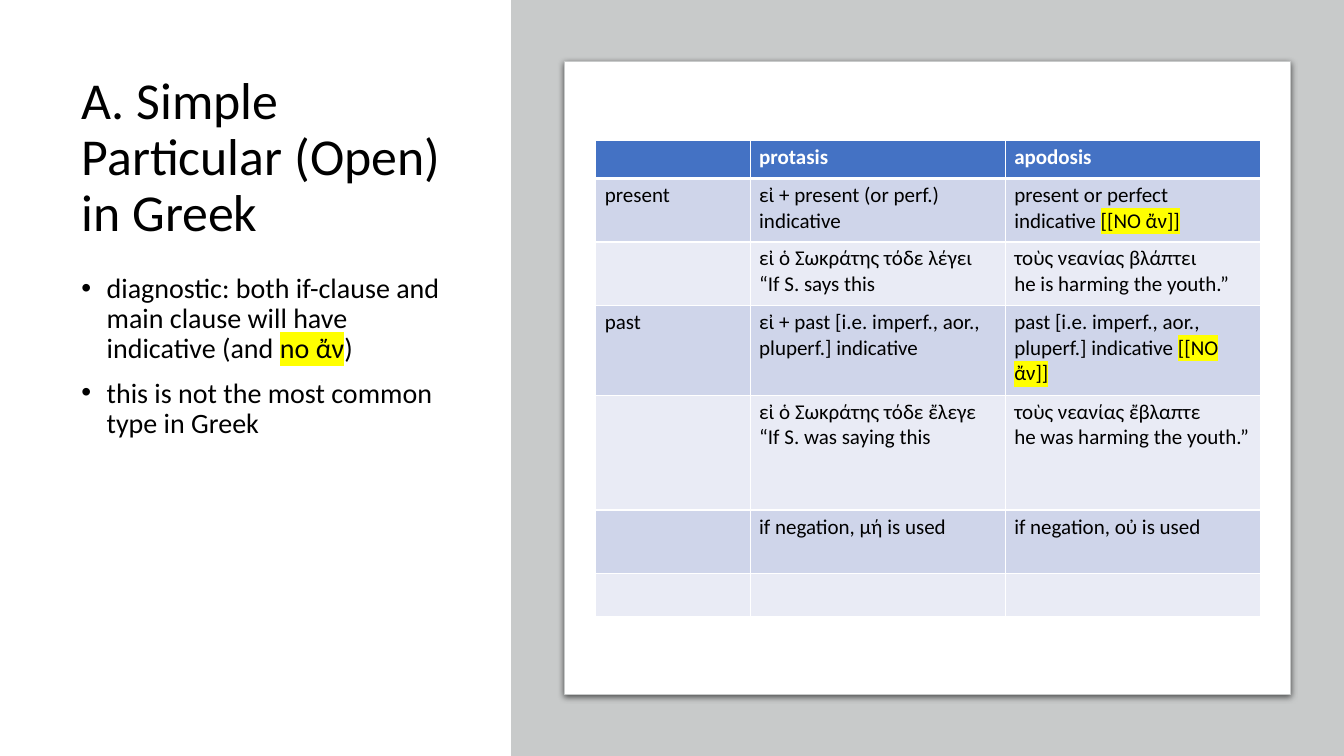
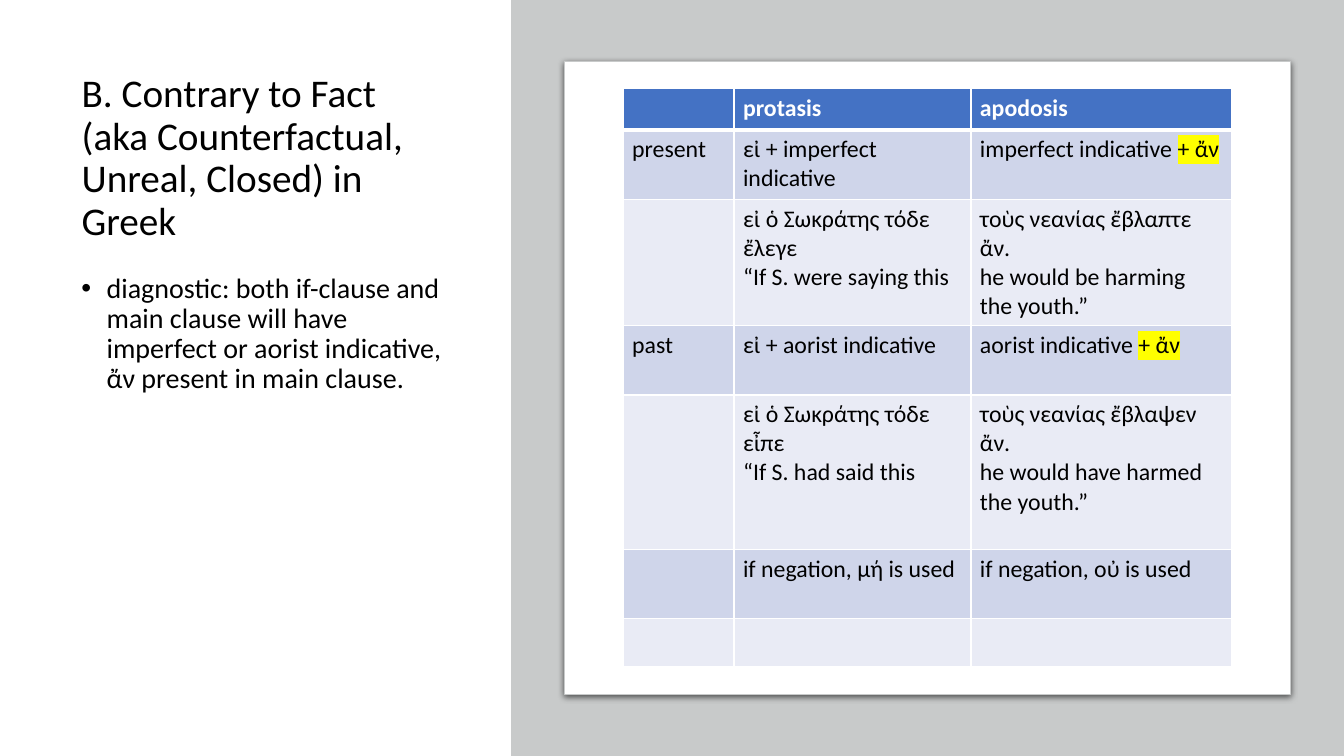
from lxml import etree
from pptx import Presentation
from pptx.dml.color import RGBColor
from pptx.enum.shapes import MSO_SHAPE
from pptx.enum.text import MSO_ANCHOR, MSO_AUTO_SIZE, PP_ALIGN
from pptx.oxml.ns import qn
from pptx.util import Inches, Pt

RECTANGLE = MSO_SHAPE.RECTANGLE
MIDDLE = MSO_ANCHOR.MIDDLE
NO_AUTOFIT = MSO_AUTO_SIZE.NONE
LEFT = PP_ALIGN.LEFT

FONT = "Calibri"
BLACK = RGBColor(0x00, 0x00, 0x00)
WHITE = RGBColor(0xFF, 0xFF, 0xFF)
GREY = RGBColor(0xC8, 0xCA, 0xCA)
HEADER_BLUE = RGBColor(0x44, 0x72, 0xC4)
BANDS = (RGBColor(0xCF, 0xD5, 0xEA), RGBColor(0xE9, 0xEB, 0xF5))
YELLOW = RGBColor(0xFF, 0xFF, 0x00)

TITLE_BOX = (0.71, 0.69, 3.83, 1.77)
BODY_BOX = (0.71, 2.67, 3.83, 4.14)
SIDE_PANEL = (5.07, 0, 8.26, 7.5)
CARD = (5.6, 0.61, 7.2, 6.28)
BODY_SIZE = 20
BULLET_INDENT = Inches(0.25)

# Text between bars is highlighted; a line break starts a new paragraph.
HEADER = ("", "protasis", "apodosis")
NEGATION = ("", "if negation, μή is used", "if negation, οὐ is used")
EMPTY = ("", "", "")

SLIDES = [
    {
        "title": "A. Simple Particular (Open) in Greek",
        "title_size": 37,
        "bullets": [
            "diagnostic: both if-clause and main clause will have indicative (and |no ἄν|)",
            "this is not the most common type in Greek",
        ],
        "table_origin": (5.91, 1.39),
        "columns": (1.53, 2.53, 2.53),
        "row_heights": (0.38, 0.63, 0.63, 0.89, 1.14, 0.63, 0.43),
        "text_size": 15,
        "cell_margin": 0.04,
        "rows": [
            HEADER,
            ("present", "εἰ + present (or perf.) indicative",
             "present or perfect indicative |[[NO ἄν]]|"),
            ("", "εἰ ὁ Σωκράτης τόδε λέγει\n“If S. says this",
             "τοὺς νεανίας βλάπτει\nhe is harming the youth.”"),
            ("past", "εἰ + past [i.e. imperf., aor., pluperf.] indicative",
             "past [i.e. imperf., aor., pluperf.] indicative |[[NO ἄν]]|"),
            ("", "εἰ ὁ Σωκράτης τόδε ἔλεγε\n“If S. was saying this",
             "τοὺς νεανίας ἔβλαπτε\nhe was harming the youth.”"),
            NEGATION,
            EMPTY,
        ],
    },
    {
        "title": "B. Contrary to Fact (aka Counterfactual, Unreal, Closed) in Greek",
        "title_size": 28,
        "bullets": [
            "diagnostic: both if-clause and main clause will have imperfect or "
            "aorist indicative, ἄν present in main clause.",
        ],
        "table_origin": (6.18, 0.88),
        "columns": (1.1, 2.35, 2.59),
        "row_heights": (0.41, 0.69, 1.25, 0.69, 1.53, 0.69, 0.47),
        "text_size": 17,
        "cell_margin": 0.05,
        "rows": [
            HEADER,
            ("present", "εἰ + imperfect indicative", "imperfect indicative |+ ἄν|"),
            ("", "εἰ ὁ Σωκράτης τόδε ἔλεγε\n“If S. were saying this",
             "τοὺς νεανίας ἔβλαπτε ἄν.\nhe would be harming the youth.”"),
            ("past", "εἰ + aorist indicative", "aorist indicative |+ ἄν|"),
            ("", "εἰ ὁ Σωκράτης τόδε εἶπε\n“If S. had said this",
             "τοὺς νεανίας ἔβλαψεν ἄν.\nhe would have harmed the youth.”"),
            NEGATION,
            EMPTY,
        ],
    },
]


def inches(values):
    return [Inches(value) for value in values]


def add_child(parent, tag, **attributes):
    child = etree.SubElement(parent, qn(tag))
    for name, value in attributes.items():
        child.set(name, str(value))
    return child


def highlight(run):
    marker = etree.Element(qn("a:highlight"))
    add_child(marker, "a:srgbClr", val=YELLOW)
    run.font.fill._xPr.find(qn("a:solidFill")).addnext(marker)


def write_text(text_frame, lines, size, color=BLACK, bold=False):
    """Write one paragraph per line, highlighting the parts between bars."""
    for index, line in enumerate(lines):
        paragraph = text_frame.paragraphs[0] if index == 0 else text_frame.add_paragraph()
        for part_index, part in enumerate(line.split("|")):
            if not part:
                continue
            run = paragraph.add_run()
            run.text = part
            run.font.name = FONT
            run.font.size = Pt(size)
            run.font.bold = bold
            run.font.color.rgb = color
            if part_index % 2:
                highlight(run)


def add_title(slide, text, size):
    title = slide.shapes.title
    title.left, title.top, title.width, title.height = inches(TITLE_BOX)
    text_frame = title.text_frame
    text_frame.word_wrap = True
    text_frame.auto_size = NO_AUTOFIT
    text_frame.vertical_anchor = MIDDLE
    write_text(text_frame, [text], size)
    text_frame.paragraphs[0].alignment = LEFT
    text_frame.paragraphs[0].line_spacing = 0.9


def add_bullets(slide, bullets):
    text_frame = slide.shapes.add_textbox(*inches(BODY_BOX)).text_frame
    text_frame.word_wrap = True
    write_text(text_frame, bullets, BODY_SIZE)
    for paragraph in text_frame.paragraphs:
        paragraph.line_spacing = 0.9
        paragraph.space_before = Pt(10)
        properties = paragraph._p.get_or_add_pPr()
        properties.set("marL", str(BULLET_INDENT))
        properties.set("indent", str(-BULLET_INDENT))
        add_child(properties, "a:buFont", typeface="Arial")
        add_child(properties, "a:buChar", char="•")


def add_panel(slide, box, color):
    panel = slide.shapes.add_shape(RECTANGLE, *inches(box))
    panel.shadow.inherit = False
    panel.fill.solid()
    panel.fill.fore_color.rgb = color
    panel.line.fill.background()
    return panel


def add_card(slide):
    card = add_panel(slide, CARD, WHITE)
    card.line.color.rgb = GREY
    card.line.width = Pt(0.75)
    effects = card._element.spPr.find(qn("a:effectLst"))
    shadow = add_child(effects, "a:outerShdw", blurRad=Pt(4.5), dist=Pt(1.5),
                       dir=90 * 60000, algn="t", rotWithShape=0)
    add_child(add_child(shadow, "a:srgbClr", val=BLACK), "a:alpha", val=63000)


def set_borders(cell, row_index):
    """Draw white borders, with a thicker line under the header row."""
    widths = {"L": 1, "R": 1, "T": 3 if row_index == 1 else 1, "B": 3 if row_index == 0 else 1}
    properties = cell._tc.get_or_add_tcPr()
    for side, width in widths.items():
        line = add_child(properties, f"a:ln{side}", w=Pt(width))
        add_child(add_child(line, "a:solidFill"), "a:srgbClr", val=WHITE)


def add_clause_table(slide, content):
    rows, columns, heights = content["rows"], content["columns"], content["row_heights"]
    table = slide.shapes.add_table(
        len(rows), len(columns), *inches(content["table_origin"]),
        Inches(sum(columns)), Inches(sum(heights))).table
    table.horz_banding = False
    for column, width in zip(table.columns, columns):
        column.width = Inches(width)
    for row_index, texts in enumerate(rows):
        table.rows[row_index].height = Inches(heights[row_index])
        is_header = row_index == 0
        for column_index, text in enumerate(texts):
            cell = table.cell(row_index, column_index)
            cell.margin_left = cell.margin_right = Inches(0.09)
            cell.margin_top = cell.margin_bottom = Inches(content["cell_margin"])
            set_borders(cell, row_index)
            cell.fill.solid()
            cell.fill.fore_color.rgb = HEADER_BLUE if is_header else BANDS[(row_index - 1) % 2]
            write_text(cell.text_frame, text.split("\n"), content["text_size"],
                       WHITE if is_header else BLACK, is_header)


def main():
    presentation = Presentation()
    presentation.slide_width = Inches(13.33)
    presentation.slide_height = Inches(7.5)
    title_only = presentation.slide_layouts[5]
    for content in SLIDES:
        slide = presentation.slides.add_slide(title_only)
        add_title(slide, content["title"], content["title_size"])
        add_bullets(slide, content["bullets"])
        add_panel(slide, SIDE_PANEL, GREY)
        add_card(slide)
        add_clause_table(slide, content)
    presentation.save("out.pptx")


if __name__ == "__main__":
    main()
